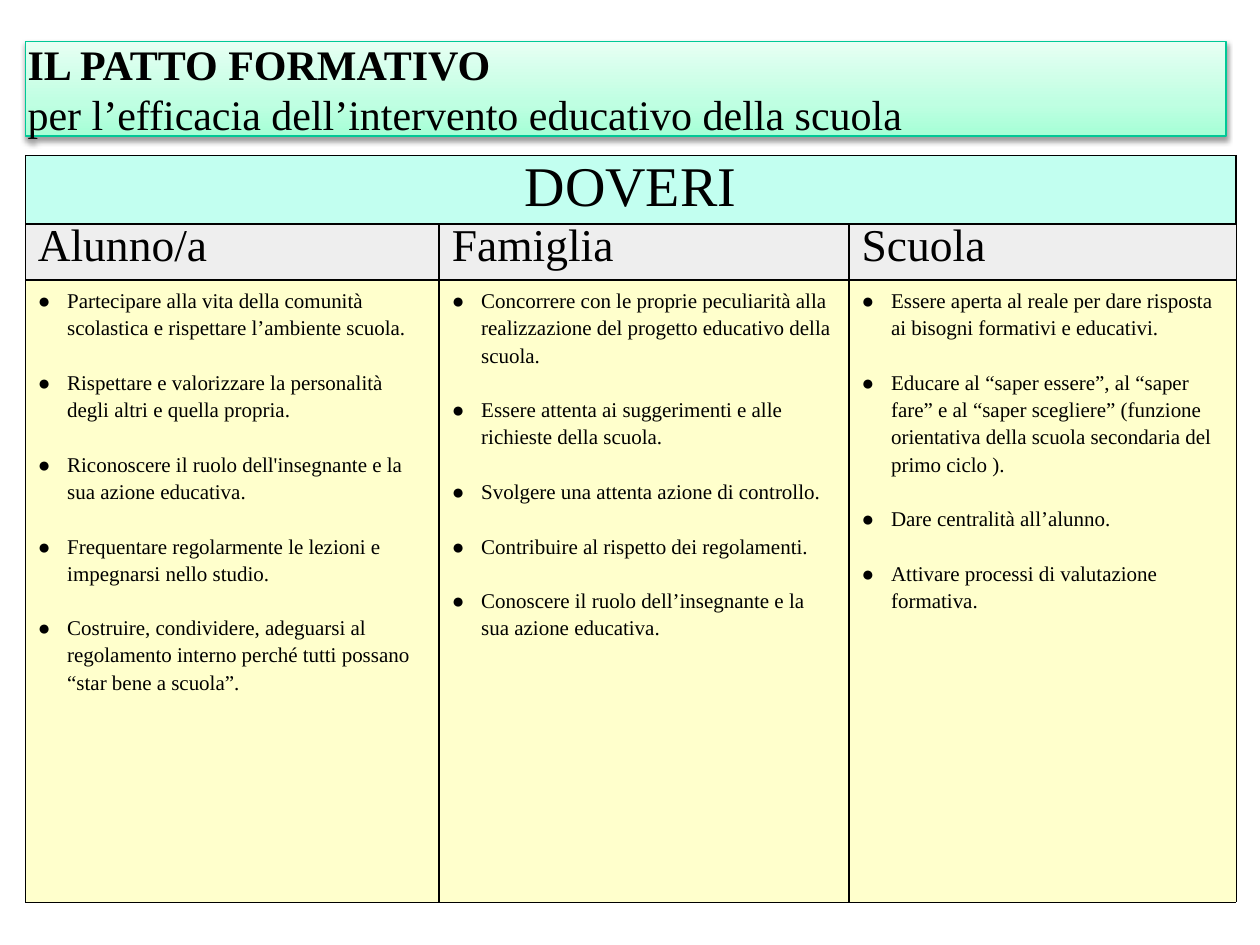
from copy import deepcopy

from lxml import etree
from pptx import Presentation
from pptx.dml.color import RGBColor
from pptx.enum.shapes import MSO_SHAPE
from pptx.enum.text import MSO_ANCHOR, PP_ALIGN
from pptx.oxml import parse_xml
from pptx.oxml.ns import qn
from pptx.util import Pt

RECTANGLE = MSO_SHAPE.RECTANGLE
MIDDLE, TOP = MSO_ANCHOR.MIDDLE, MSO_ANCHOR.TOP
LEFT, CENTER = PP_ALIGN.LEFT, PP_ALIGN.CENTER
NAMESPACE = 'xmlns:a="http://schemas.openxmlformats.org/drawingml/2006/main"'

COLORS = {
    "text": "000000", "duties": "C2FFF0", "heading": "EEEEEE", "body": "FFFFCC",
    "banner_line": "00C896", "low": "A5FFD6", "mid": "BFFFE2", "high": "E7FFF3",
}
FONT = "Times New Roman"
THIN, THICK = 0.11, 1.13
INDENT = 16.8

DUTIES = {
    "Alunno/a": [
        "Partecipare alla vita della comunità scolastica e rispettare l’ambiente scuola.",
        "Rispettare e valorizzare la personalità degli altri e quella propria.",
        "Riconoscere il ruolo dell'insegnante e la sua azione educativa.",
        "Frequentare regolarmente le lezioni e impegnarsi nello studio.",
        "Costruire, condividere, adeguarsi al regolamento interno perché tutti possano “star bene a scuola”.",
    ],
    "Famiglia": [
        "Concorrere con le proprie peculiarità alla realizzazione del progetto educativo della scuola.",
        "Essere attenta ai suggerimenti e alle richieste della scuola.",
        "Svolgere una attenta azione di controllo.",
        "Contribuire al rispetto dei regolamenti.",
        "Conoscere il ruolo dell’insegnante e la sua azione educativa.",
    ],
    "Scuola": [
        "Essere aperta al reale per dare risposta ai bisogni formativi e educativi.",
        "Educare al “saper essere”, al “saper fare” e al “saper scegliere” (funzione orientativa della scuola secondaria del primo ciclo ).",
        "Dare centralità all’alunno.",
        "Attivare processi di valutazione formativa.",
    ],
}
ROWS = [
    {"height": 39.6, "fill": "duties", "size": 32, "spacing": 0.62,
     "cell": {"margin_top": Pt(10), "margin_bottom": Pt(4.3), "vertical_anchor": MIDDLE},
     "para": {"alignment": CENTER}},
    {"height": 31.7, "fill": "heading", "size": 26, "spacing": 0.62,
     "cell": {"margin_top": Pt(7.2), "margin_bottom": Pt(3.6), "vertical_anchor": TOP},
     "para": {"alignment": LEFT}},
    {"height": 355.7, "fill": "body", "size": 12, "spacing": 1.17,
     "cell": {"margin_top": Pt(3.6), "margin_bottom": Pt(3.6), "vertical_anchor": TOP},
     "para": {"alignment": LEFT, "space_after": Pt(15.6)}},
]
COLUMN_WIDTHS = [236.6, 234.2, 221]


def write(frame, texts, size, bold_first=False):
    for index, text in enumerate(texts):
        para = frame.paragraphs[0] if index == 0 else frame.add_paragraph()
        span = para.add_run()
        span.text = text
        formats = {"name": FONT, "size": Pt(size), "bold": bold_first and index == 0}
        for name, value in formats.items():
            setattr(span.font, name, value)
        span.font.color.rgb = RGBColor.from_string(COLORS["text"])


def add_borders(cell, widths):
    for side, width in widths.items():
        cell._tc.get_or_add_tcPr().append(parse_xml(
            f'<a:ln{side} {NAMESPACE} w="{int(Pt(width))}"><a:solidFill>'
            f'<a:srgbClr val="{COLORS["text"]}"/></a:solidFill></a:ln{side}>'))


deck = Presentation()
deck.slide_width, deck.slide_height = Pt(720), Pt(540)
page = deck.slides.add_slide(deck.slide_layouts[6])

table = page.shapes.add_table(
    len(ROWS), len(COLUMN_WIDTHS), Pt(14.4), Pt(88.6),
    Pt(sum(COLUMN_WIDTHS)), Pt(sum(row["height"] for row in ROWS))).table
table.first_row = table.horz_banding = False
for column, width in zip(table.columns, COLUMN_WIDTHS):
    column.width = Pt(width)
last_row, last_column = len(ROWS) - 1, len(COLUMN_WIDTHS) - 1
contents = [[["DOVERI"], [], []], [[heading] for heading in DUTIES], list(DUTIES.values())]

for r, row in enumerate(ROWS):
    table.rows[r].height = Pt(row["height"])
    for c, texts in enumerate(contents[r]):
        cell = table.cell(r, c)
        add_borders(cell, {
            "L": THIN if c == 0 else THICK,
            "R": THIN if c == last_column and r > 0 else THICK,
            "T": THIN if r == 0 else THICK,
            "B": THIN if r == last_row else THICK,
        })
        cell.fill.solid()
        cell.fill.fore_color.rgb = RGBColor.from_string(COLORS[row["fill"]])
        for name, value in row["cell"].items():
            setattr(cell, name, value)
        write(cell.text_frame, texts, row["size"])
        for para in cell.text_frame.paragraphs:
            para.line_spacing = row["spacing"]
            for name, value in row["para"].items():
                setattr(para, name, value)
            if r == last_row:
                properties = para._p.get_or_add_pPr()
                properties.set("marL", str(int(Pt(INDENT))))
                properties.set("indent", str(-int(Pt(INDENT))))
                color = etree.SubElement(properties, qn("a:buClr"))
                etree.SubElement(color, qn("a:srgbClr"), val=COLORS["text"])
                etree.SubElement(properties, qn("a:buFont"), typeface=FONT)
                etree.SubElement(properties, qn("a:buChar"), char="●")
table.cell(0, 0).merge(table.cell(0, last_column))

banner = page.shapes.add_shape(RECTANGLE, Pt(14.4), Pt(23.8), Pt(686.2), Pt(54))
banner.line.color.rgb = RGBColor.from_string(COLORS["banner_line"])
banner.line.width = Pt(0.75)
banner.fill.gradient()
banner.fill.gradient_angle = 90
stop_list = banner._element.spPr.find(qn("a:gradFill")).find(qn("a:gsLst"))
stop_list.append(deepcopy(stop_list[0]))
for stop, (position, color) in zip(
        banner.fill.gradient_stops, [(0, "low"), (0.35, "mid"), (1, "high")]):
    stop.position = position
    stop.color.rgb = RGBColor.from_string(COLORS[color])
banner.shadow.inherit = False
banner._element.spPr.find(qn("a:effectLst")).append(parse_xml(
    f'<a:outerShdw {NAMESPACE} blurRad="{int(Pt(3.1))}" dist="{int(Pt(1.6))}" '
    f'dir="5400000" rotWithShape="0"><a:srgbClr val="{COLORS["text"]}">'
    '<a:alpha val="38000"/></a:srgbClr></a:outerShdw>'))
frame = banner.text_frame
frame_formats = {
    "margin_left": Pt(1.4), "margin_right": Pt(1.4), "margin_top": Pt(-2),
    "margin_bottom": Pt(-2), "word_wrap": True, "vertical_anchor": MIDDLE,
}
for name, value in frame_formats.items():
    setattr(frame, name, value)
write(frame, ["IL PATTO FORMATIVO", "per l’efficacia dell’intervento educativo della scuola"],
      24, bold_first=True)
for para in frame.paragraphs:
    para.alignment = LEFT

deck.save("out.pptx")
